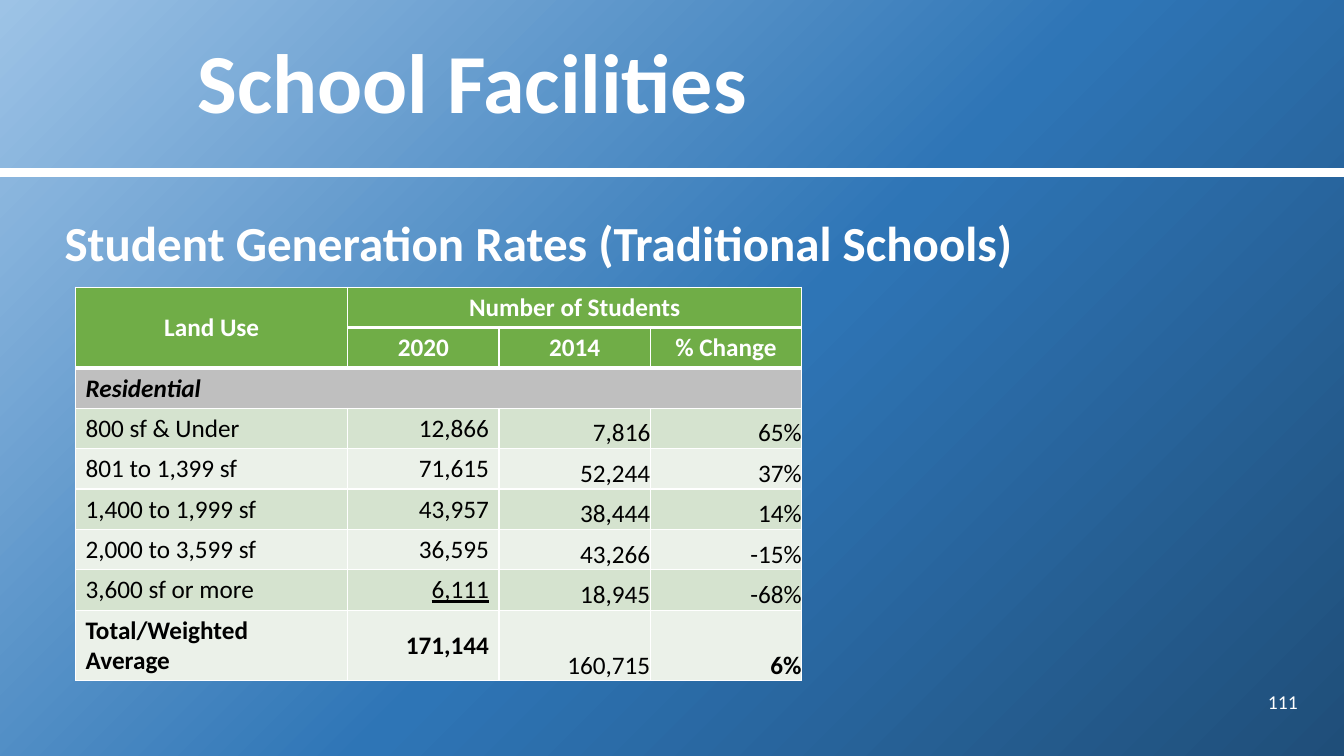
from lxml import etree
from pptx import Presentation
from pptx.dml.color import RGBColor
from pptx.enum.shapes import MSO_CONNECTOR
from pptx.enum.text import MSO_ANCHOR as ANCHOR, MSO_AUTO_SIZE, PP_ALIGN as ALIGN
from pptx.oxml import parse_xml
from pptx.oxml.ns import nsdecls, qn
from pptx.util import Inches, Pt

COLORS = {
    "white": "FFFFFF", "black": "000000", "header": "70AD47", "section": "BFBFBF",
    "band_dark": "D5E3CF", "band_light": "EBF1E9",
    "sky": "9DC3E6", "blue": "2E75B6", "navy": "1F4E79",
}
FONT = "Calibri"
COL_WIDTHS = (2.7, 1.5, 1.5, 1.5)
ROW_HEIGHT = 0.4
HEADER_ROWS = 2
ROWS = [
    ("Land Use", "Number of Students", "", ""),
    ("", "2020", "2014", "% Change"),
    ("Residential", "", "", ""),
    ("800 sf & Under", "12,866", "7,816", "65%"),
    ("801 to 1,399 sf", "71,615", "52,244", "37%"),
    ("1,400 to 1,999 sf", "43,957", "38,444", "14%"),
    ("2,000 to 3,599 sf", "36,595", "43,266", "-15%"),
    ("3,600 sf or more", "6,111", "18,945", "-68%"),
    ("Total/Weighted Average", "171,144", "160,715", "6%"),
]
SECTION_ROW = 2
TOTAL_ROW = len(ROWS) - 1


def rgb(name):
    return RGBColor.from_string(COLORS[name])


def style(font, size, color="white", bold=False):
    font.name, font.size, font.bold = FONT, Pt(size), bold
    font.color.rgb = rgb(color)


def place(sp, left, top, width, height):
    sp.left, sp.top = Inches(left), Inches(top)
    sp.width, sp.height = Inches(width), Inches(height)


def set_background(slide):
    """Fill the slide with a gradient that spreads from the top left corner."""
    slide.background.fill.solid()
    stops = "".join(
        f'<a:gs pos="{pos * 1000}"><a:srgbClr val="{COLORS[name]}"/></a:gs>'
        for pos, name in ((0, "sky"), (53, "blue"), (100, "navy")))
    grad = parse_xml(
        f'<a:gradFill {nsdecls("a")} rotWithShape="1"><a:gsLst>{stops}</a:gsLst>'
        '<a:path path="circle"><a:fillToRect r="100000" b="100000"/></a:path></a:gradFill>')
    bg_pr = slide.background._cSld.bg.bgPr
    bg_pr.replace(bg_pr.find(qn("a:solidFill")), grad)


def add_title(slide, left, top, width, height):
    sp = slide.shapes.title
    place(sp, left, top, width, height)
    tf = sp.text_frame
    tf.auto_size, tf.vertical_anchor = MSO_AUTO_SIZE.NONE, ANCHOR.MIDDLE
    p = tf.paragraphs[0]
    p.alignment, p.line_spacing = ALIGN.LEFT, 0.9
    r = p.add_run()
    r.text = "School Facilities"
    style(r.font, 60, bold=True)
    shadow = parse_xml(
        f'<a:effectLst {nsdecls("a")}><a:outerShdw blurRad="38100" dist="38100" dir="2700000">'
        f'<a:srgbClr val="{COLORS["black"]}"><a:alpha val="43000"/></a:srgbClr>'
        '</a:outerShdw></a:effectLst>')
    r.font._element.find(qn("a:solidFill")).addnext(shadow)


def add_divider(slide, left, top, width):
    line = slide.shapes.add_connector(
        MSO_CONNECTOR.STRAIGHT, Inches(left), Inches(top), Inches(left + width), Inches(top))
    line.line.color.rgb, line.line.width = rgb("white"), Pt(6)
    etree.SubElement(line._element.spPr, qn("a:effectLst"))


def add_heading(slide, left, top, width, height):
    sp = slide.placeholders[1]
    place(sp, left, top, width, height)
    tf = sp.text_frame
    tf.auto_size, tf.vertical_anchor = MSO_AUTO_SIZE.NONE, ANCHOR.TOP
    p = tf.paragraphs[0]
    p.text = "Student Generation Rates (Traditional Schools)"
    p.line_spacing, p.space_before = 1.2, Pt(0)
    p_pr = p._p.get_or_add_pPr()
    p_pr.set("marL", "0")
    p_pr.set("indent", "0")
    etree.SubElement(p_pr, qn("a:buNone"))
    style(p.font, 35, bold=True)


def set_borders(cell, top, bottom):
    tc_pr = cell._tc.get_or_add_tcPr()
    for side, width in (("L", 1), ("R", 1), ("T", top), ("B", bottom)):
        tc_pr.append(parse_xml(
            f'<a:ln{side} {nsdecls("a")} w="{Pt(width)}"><a:solidFill>'
            f'<a:srgbClr val="{COLORS["white"]}"/></a:solidFill></a:ln{side}>'))


def row_fill(row):
    if row < HEADER_ROWS:
        return "header"
    if row == SECTION_ROW:
        return "section"
    return "band_dark" if row % 2 else "band_light"


def fill_cell(cell, row, col, text):
    header = row < HEADER_ROWS
    set_borders(cell, 3 if 0 < row <= HEADER_ROWS else 1, 3 if header else 1)
    cell.fill.solid()
    cell.fill.fore_color.rgb = rgb(row_fill(row))
    cell.vertical_anchor = ANCHOR.MIDDLE
    if row > SECTION_ROW and col >= 2:
        cell.vertical_anchor = ANCHOR.BOTTOM
        cell.margin_left = cell.margin_right = cell.margin_top = cell.margin_bottom = 0
    p = cell.text_frame.paragraphs[0]
    p.text = text
    p.alignment = ALIGN.CENTER if header else ALIGN.RIGHT if col else ALIGN.LEFT
    bold = row <= SECTION_ROW or (row == TOTAL_ROW and col != 2)
    style(p.font, 18, "white" if header else "black", bold)
    p.font.italic = row == SECTION_ROW
    p.font.underline = text == "6,111"


def add_rates_table(slide, left, top):
    frame = slide.shapes.add_table(
        len(ROWS), len(COL_WIDTHS), Inches(left), Inches(top),
        Inches(sum(COL_WIDTHS)), Inches(ROW_HEIGHT * len(ROWS)))
    table = frame.table
    for column, width in zip(table.columns, COL_WIDTHS):
        column.width = Inches(width)
    for i, texts in enumerate(ROWS):
        for j, text in enumerate(texts):
            fill_cell(table.cell(i, j), i, j, text)
    for first, last in (((0, 0), (1, 0)), ((0, 1), (0, 3)), ((2, 0), (2, 3))):
        table.cell(*first).merge(table.cell(*last))


def add_page_number(slide, left, top, width, height):
    sp = slide.shapes.add_textbox(Inches(left), Inches(top), Inches(width), Inches(height))
    tf = sp.text_frame
    tf.word_wrap, tf.vertical_anchor = True, ANCHOR.MIDDLE
    p = tf.paragraphs[0]
    p.text, p.alignment = "111", ALIGN.RIGHT
    style(p.font, 14)


def main():
    prs = Presentation()
    prs.slide_width, prs.slide_height = Inches(13.33), Inches(7.5)
    slide = prs.slides.add_slide(prs.slide_layouts[1])
    set_background(slide)
    add_divider(slide, 0, 1.71, 13.33)
    add_title(slide, 1.86, 0, 11.1, 1.71)
    add_page_number(slide, 12.08, 6.76, 0.89, 0.4)
    add_heading(slide, 0.54, 1.94, 12.42, 5.27)
    add_rates_table(slide, 0.75, 2.85)
    prs.save("out.pptx")


if __name__ == "__main__":
    main()
